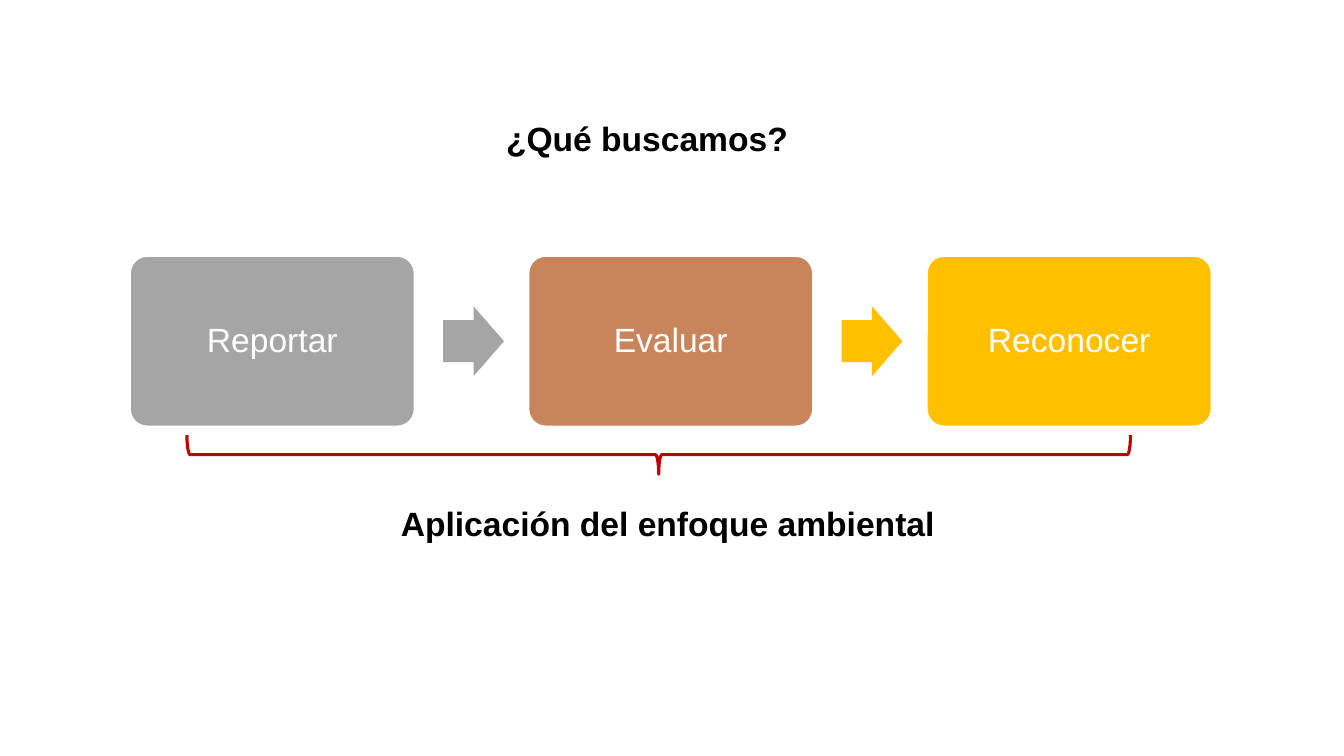
from dataclasses import dataclass

from pptx import Presentation
from pptx.dml.color import RGBColor
from pptx.enum.shapes import MSO_SHAPE
from pptx.enum.text import MSO_ANCHOR, MSO_AUTO_SIZE, PP_ALIGN
from pptx.shapes.autoshape import Shape
from pptx.slide import Slide
from pptx.util import Pt


@dataclass(frozen=True)
class Theme:
    font: str = "Arial"
    size: float = 24
    dark: str = "000000"
    light: str = "FFFFFF"
    brace: str = "C00000"


@dataclass(frozen=True)
class Box:
    left: float
    top: float
    width: float
    height: float

    def lengths(self) -> tuple[Pt, Pt, Pt, Pt]:
        return Pt(self.left), Pt(self.top), Pt(self.width), Pt(self.height)


@dataclass(frozen=True)
class Step:
    label: str
    color: str


THEME = Theme()
STEPS = [
    Step("Reportar", "A5A5A5"),
    Step("Evaluar", "C8855C"),
    Step("Reconocer", "FFC000"),
]
ARROW_COLORS = [STEPS[0].color, STEPS[2].color]
FIRST_STEP = Box(93, 183, 203, 121.5)
FIRST_ARROW = Box(316.5, 218.75, 43.5, 50)
STEP_PITCH = 284.6
TITLE = Box(354.25, 80.75, 308, 36)
BRACE = Box(456.5, -12.25, 28, 674)
CAPTION = Box(279.25, 355.75, 606, 36)


def rgb(color: str) -> RGBColor:
    return RGBColor.from_string(color)


def put_text(
    sp: Shape,
    text: str,
    color: str = THEME.dark,
    bold: bool = False,
    align: PP_ALIGN = PP_ALIGN.LEFT,
    anchor: MSO_ANCHOR = MSO_ANCHOR.TOP,
    auto_size: MSO_AUTO_SIZE = MSO_AUTO_SIZE.NONE,
    spacing: float = 1.0,
) -> None:
    tf = sp.text_frame
    tf.word_wrap = True
    tf.auto_size = auto_size
    tf.vertical_anchor = anchor
    p = tf.paragraphs[0]
    p.alignment = align
    p.line_spacing = spacing
    r = p.add_run()
    r.text = text
    r.font.name = THEME.font
    r.font.size = Pt(THEME.size)
    r.font.bold = bold
    r.font.color.rgb = rgb(color)


def add_shape(
    slide: Slide,
    kind: MSO_SHAPE,
    box: Box,
    fill: str | None = None,
    line: str | None = None,
    line_width: float = 1,
) -> Shape:
    sp = slide.shapes.add_shape(kind, *box.lengths())
    sp.shadow.inherit = False
    if fill:
        sp.fill.solid()
        sp.fill.fore_color.rgb = rgb(fill)
    else:
        sp.fill.background()
    if line:
        sp.line.color.rgb = rgb(line)
        sp.line.width = Pt(line_width)
    else:
        sp.line.fill.background()
    return sp


def shifted(box: Box, index: int) -> Box:
    return Box(box.left + index * STEP_PITCH, box.top, box.width, box.height)


def add_step(slide: Slide, step: Step, index: int) -> None:
    sp = add_shape(slide, MSO_SHAPE.ROUNDED_RECTANGLE, shifted(FIRST_STEP, index),
                   fill=step.color, line=THEME.light)
    sp.adjustments[0] = 0.1
    put_text(sp, step.label, color=THEME.light, align=PP_ALIGN.CENTER,
             anchor=MSO_ANCHOR.MIDDLE, spacing=0.9)


def add_arrow(slide: Slide, color: str, index: int) -> None:
    sp = add_shape(slide, MSO_SHAPE.RIGHT_ARROW, shifted(FIRST_ARROW, index), fill=color)
    sp.adjustments[0] = 0.6
    sp.adjustments[1] = 0.5


def add_title(slide: Slide, text: str) -> None:
    sp = slide.shapes.title
    sp.left, sp.top, sp.width, sp.height = TITLE.lengths()
    put_text(sp, text, bold=True, auto_size=MSO_AUTO_SIZE.SHAPE_TO_FIT_TEXT)


def add_caption(slide: Slide, text: str) -> None:
    sp = slide.shapes.add_textbox(*CAPTION.lengths())
    put_text(sp, text, bold=True, auto_size=MSO_AUTO_SIZE.SHAPE_TO_FIT_TEXT)


def main() -> None:
    prs = Presentation()
    prs.slide_width, prs.slide_height = Pt(960), Pt(540)
    slide = prs.slides.add_slide(prs.slide_layouts[5])
    add_title(slide, "¿Qué buscamos?")
    for index, step in enumerate(STEPS):
        add_step(slide, step, index)
    for index, color in enumerate(ARROW_COLORS):
        add_arrow(slide, color, index)
    brace = add_shape(slide, MSO_SHAPE.LEFT_BRACE, BRACE, line=THEME.brace, line_width=2.25)
    brace.rotation = 270
    add_caption(slide, "Aplicación del enfoque ambiental")
    prs.save("out.pptx")


if __name__ == "__main__":
    main()
